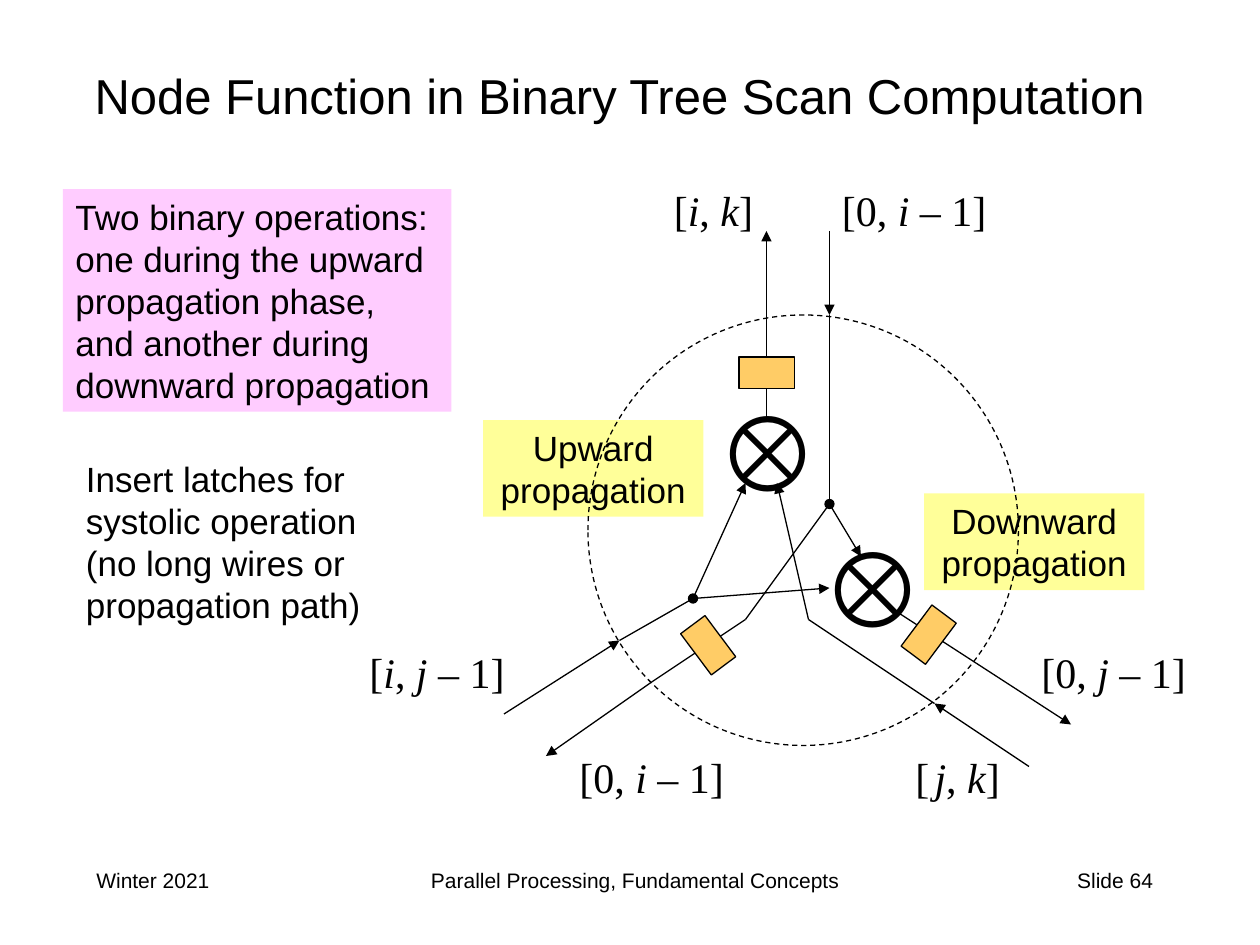
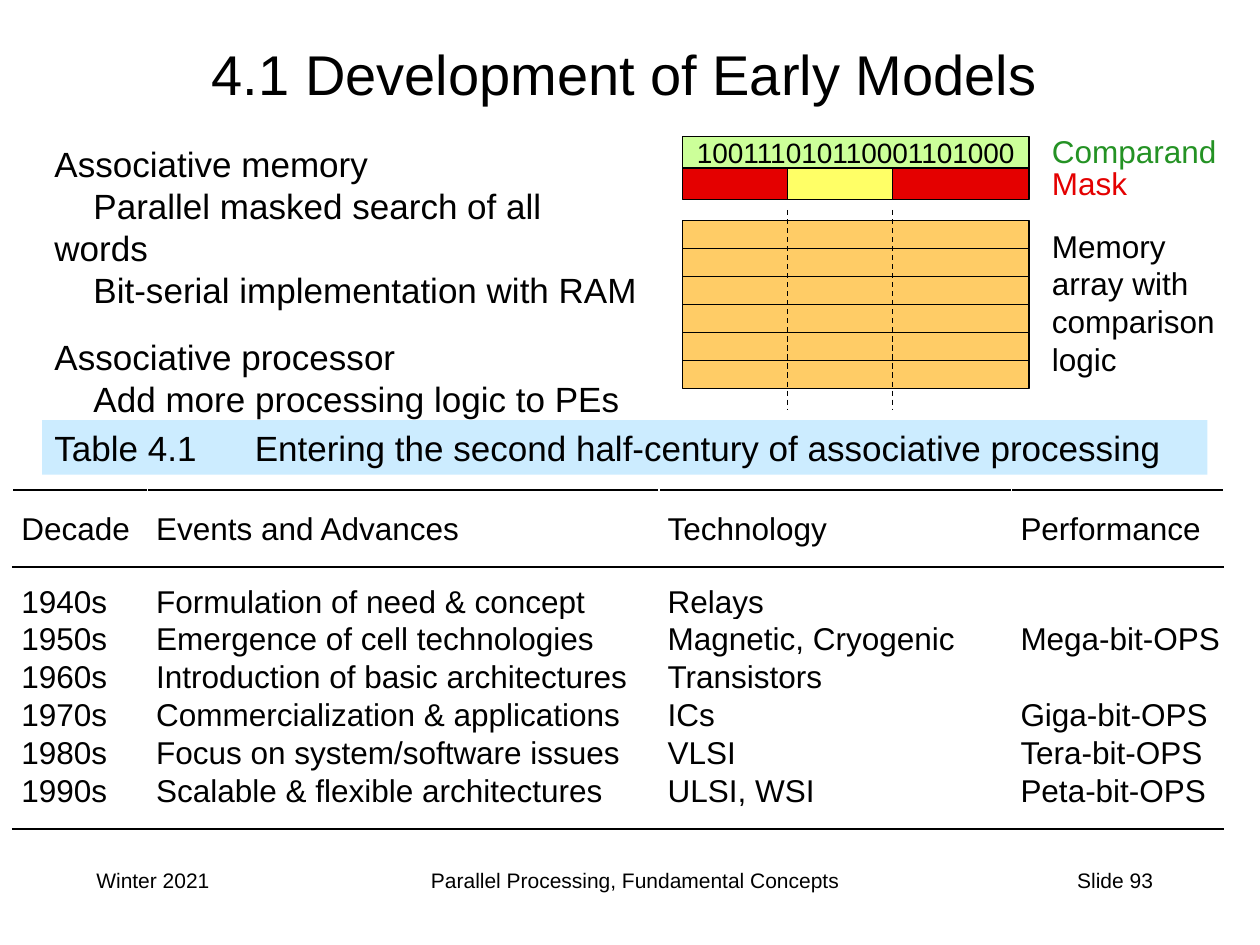
from lxml import etree
from pptx import Presentation
from pptx import util as u
from pptx.dml.color import RGBColor
from pptx.enum import dml, shapes, text
from pptx.oxml import ns

HUES = {
    "ink": "000000", "pink": "FFCCFF", "lemon": "FFFF99",
    "gold": "FFCC66", "ice": "CCECFF", "lime": "CCFF99", "sun": "FFFF66",
    "red": "E40000", "green": "249224",
}
RECT = shapes.MSO_SHAPE.RECTANGLE
LEFT, MID, RIGHT = text.PP_ALIGN.LEFT, text.PP_ALIGN.CENTER, text.PP_ALIGN.RIGHT
ARIAL, TIMES = "Arial", "Times New Roman"

deck = Presentation()
deck.slide_width, deck.slide_height = u.Inches(10), u.Inches(7.5)
UNIT = deck.slide_width // 120


def write(frame, lines, size, align=LEFT, font=ARIAL, hue="ink"):
    frame.word_wrap = True
    for n, line in enumerate(lines):
        para = frame.paragraphs[0] if n == 0 else frame.add_paragraph()
        para.alignment = align
        if font == ARIAL:
            para.line_spacing = u.Pt(1.2 * size)
        for part in [line] if isinstance(line, str) else line:
            run = para.add_run()
            run.text = part.strip("*")
            run.font.size = u.Pt(size)
            run.font.name = font
            run.font.italic = part.startswith("*")
            run.font.color.rgb = RGBColor.from_string(HUES[hue])


def block(page, spot, fill=None, edge=False, form=RECT):
    spot = [round(n * UNIT) for n in spot]
    if not fill and not edge:
        return page.shapes.add_textbox(*spot)
    item = page.shapes.add_shape(form, *spot)
    item.shadow.inherit = False
    if fill:
        item.fill.solid()
        item.fill.fore_color.rgb = RGBColor.from_string(HUES[fill])
    else:
        item.fill.background()
    if edge:
        item.line.color.rgb = RGBColor.from_string(HUES["ink"])
        item.line.width = u.Pt(0.75)
    else:
        item.line.fill.background()
    item.text_frame.vertical_anchor = text.MSO_ANCHOR.TOP
    return item


pages = []
for name, size, spot, num in [
    ("Node Function in Binary Tree Scan Computation", 28, (3, 4, 112, 10), 64),
    ("4.1 Development of Early Models", 32, (5, 2, 109, 10), 93),
]:
    page = deck.slides.add_slide(deck.slide_layouts[5])
    pages.append(page)
    head = page.shapes.title
    head.left, head.top, head.width, head.height = [n * UNIT for n in spot]
    head.text_frame.auto_size = text.MSO_AUTO_SIZE.NONE
    head.text_frame.vertical_anchor = text.MSO_ANCHOR.MIDDLE
    write(head.text_frame, [name], size, MID)
    for left, wide, align, words in [
        (8, 25, LEFT, "Winter 2021"),
        (29, 63, MID, "Parallel Processing, Fundamental Concepts"),
        (86, 25, RIGHT, f"Slide {num}"),
    ]:
        write(block(page, (left, 82, wide, 6)).text_frame, [words], 12, align)
node, early = pages

for spot, fill, align, lines in [
    ((6, 18, 37, 21.2), "pink", LEFT, ["Two binary operations: one during the upward propagation "
                                       "phase, and another during downward propagation"]),
    ((46, 40, 21, 9.2), "lemon", MID, ["Upward", "propagation"]),
    ((88, 47, 21, 9.2), "lemon", MID, ["Downward", "propagation"]),
    ((7, 43, 31, 17.2), None, LEFT, ["Insert latches for systolic operation "
                                     "(no long wires or propagation path)"]),
]:
    write(block(node, spot, fill).text_frame, lines, 20, align)

ring = block(node, (56, 30, 41, 41), edge=True, form=shapes.MSO_SHAPE.OVAL)
ring.line.dash_style = dml.MSO_LINE.DASH

for row in range(6):
    block(early, (65, 21 + row * 16 / 6, 33, 16 / 6), "gold", True)
block(early, (65, 16, 33, 3), "red", True)
block(early, (75, 16, 10, 3), "sun", True)
bits = block(early, (65, 13, 33, 3), "lime", True).text_frame
write(bits, ["100111010110001101000"], 16, MID)
bits.word_wrap = False
bits.vertical_anchor = text.MSO_ANCHOR.MIDDLE

for page, ends, start, stop, dash in [
    (node, (48, 68, 59, 61), None, "triangle", False),
    (node, (62, 65, 52, 72), None, "triangle", False),
    (node, (98, 73, 89, 67), None, "triangle", False),
    (node, (85, 58, 102, 69), None, "triangle", False),
    (node, (73, 40, 73, 22), None, "triangle", False),
    (node, (79, 22, 79, 30), None, "triangle", False),
    (node, (66, 57, 71, 46), None, "triangle", False),
    (node, (77, 59, 74, 46), None, "triangle", False),
    (node, (79, 48, 82, 53), "oval", "triangle", False),
    (node, (66, 57, 79, 56), "oval", "triangle", False),
    (node, (89, 67, 77, 59), None, None, False),
    (node, (59, 61, 66, 57), None, None, False),
    (node, (71, 59, 62, 65), None, None, False),
    (node, (79, 30, 79, 48), None, None, False),
    (node, (71, 59, 79, 48), None, None, False),
    (early, (75, 20, 75, 39), None, None, True),
    (early, (85, 20, 85, 39), None, None, True),
]:
    wire = page.shapes.add_connector(shapes.MSO_CONNECTOR.STRAIGHT, *[n * UNIT for n in ends])
    wire.line.color.rgb = RGBColor.from_string(HUES["ink"])
    wire.line.width = u.Pt(0.75)
    if dash:
        wire.line.dash_style = dml.MSO_LINE.DASH
    for tag, kind in (("a:headEnd", start), ("a:tailEnd", stop)):
        if kind:
            etree.SubElement(wire.line._get_or_add_ln(), ns.qn(tag), type=kind)
    etree.SubElement(wire._element.spPr, ns.qn("a:effectLst"))

for spot in (67, 36, 12, 13.2), (77, 49, 11.2, 13.2):
    write(block(node, spot).text_frame, ["⊗"], 60, MID, TIMES)

for left, top, parts in [
    (34, 61, ["[", "*i", ", ", "*j", " – 1]"]),
    (54, 71, ["[0, ", "*i", " – 1]"]),
    (86, 71, ["[", " ", "*j", ", ", "*k", "]"]),
    (98, 61, ["[0, ", "*j", " – 1]"]),
    (63, 17, ["[", "*i", ", ", "*k", "]"]),
    (79, 17, ["[0, ", "*i", " – 1]"]),
]:
    label = block(node, (left, top, 18, 6)).text_frame
    write(label, [parts], 24, LEFT, TIMES)
    for run in label.paragraphs[0].runs:
        if run.text == " ":
            run.font.size = u.Pt(12)

for spot, turn in [
    ((66, 59, 2.9, 4.9), -36.8),
    ((87, 58, 2.9, 4.9), 36.8),
    ((70.4, 34, 5.3, 3), 0),
]:
    block(node, spot, "gold", True).rotation = turn

for spot, words, hue in [
    ((99, 12, 20, 5), "Comparand", "green"),
    ((99, 15, 20, 5), "Mask", "red"),
    ((99, 21, 18, 15.6), "Memory array with comparison logic", "ink"),
]:
    write(block(early, spot).text_frame, [words], 18, hue=hue)

notes = block(early, (4, 13, 58.5, 23.6)).text_frame
write(notes, [
    "Associative memory",
    "Parallel masked search of all words",
    "Bit-serial implementation with RAM",
    "Associative processor",
    "Add more processing logic to PEs",
], 20)
for n in (1, 2, 4):
    props = notes.paragraphs[n]._p.get_or_add_pPr()
    props.set("marL", "0")
    props.set("indent", str(u.Inches(0.31)))
notes.paragraphs[3].space_before = u.Pt(14)

band = block(early, (4, 40, 111, 5.2), "ice").text_frame
write(band, ["Table 4.1\tEntering the second half-century of associative processing"], 20)
stops = etree.SubElement(band.paragraphs[0]._p.get_or_add_pPr(), ns.qn("a:tabLst"))
etree.SubElement(stops, ns.qn("a:tab"), pos=str(u.Inches(1.59)), algn="l")

rows = [
    ("Decade", "Events and Advances", "Technology", "Performance"),
    ("1940s", "Formulation of need & concept", "Relays", ""),
    ("1950s", "Emergence of cell technologies", "Magnetic, Cryogenic", "Mega-bit-OPS"),
    ("1960s", "Introduction of basic architectures", "Transistors", ""),
    ("1970s", "Commercialization & applications", "ICs", "Giga-bit-OPS"),
    ("1980s", "Focus on system/software issues", "VLSI", "Tera-bit-OPS"),
    ("1990s", "Scalable & flexible architectures", "ULSI, WSI", "Peta-bit-OPS"),
]
wide = [1.07, 4.06, 2.8, 1.68]
tall = [0.61, 0.42] + [0.3] * 4 + [0.46]
grid = early.shapes.add_table(len(rows), len(wide), u.Inches(0.1), u.Inches(3.89),
                              u.Inches(sum(wide)), u.Inches(sum(tall))).table
grid.first_row = grid.horz_banding = False
for col, size in zip(grid.columns, wide):
    col.width = u.Inches(size)
for r, (row, size) in enumerate(zip(rows, tall)):
    grid.rows[r].height = u.Inches(size)
    for c, words in enumerate(row):
        cell = grid.cell(r, c)
        cell.margin_left = u.Inches(0.07)
        cell.margin_right = cell.margin_top = cell.margin_bottom = 0
        cell.vertical_anchor = [text.MSO_ANCHOR.MIDDLE, text.MSO_ANCHOR.BOTTOM,
                                text.MSO_ANCHOR.TOP][min(r, 2)]
        write(cell.text_frame, [words], 18)
        for tag, spots in (("a:lnT", (0, 1)), ("a:lnB", (0, len(rows) - 1))):
            if r in spots:
                rule = etree.SubElement(cell._tc.get_or_add_tcPr(), ns.qn(tag), w=str(u.Pt(1)))
                solid = etree.SubElement(rule, ns.qn("a:solidFill"))
                etree.SubElement(solid, ns.qn("a:srgbClr"), val=HUES["ink"])
        cell.fill.background()

deck.save("out.pptx")
